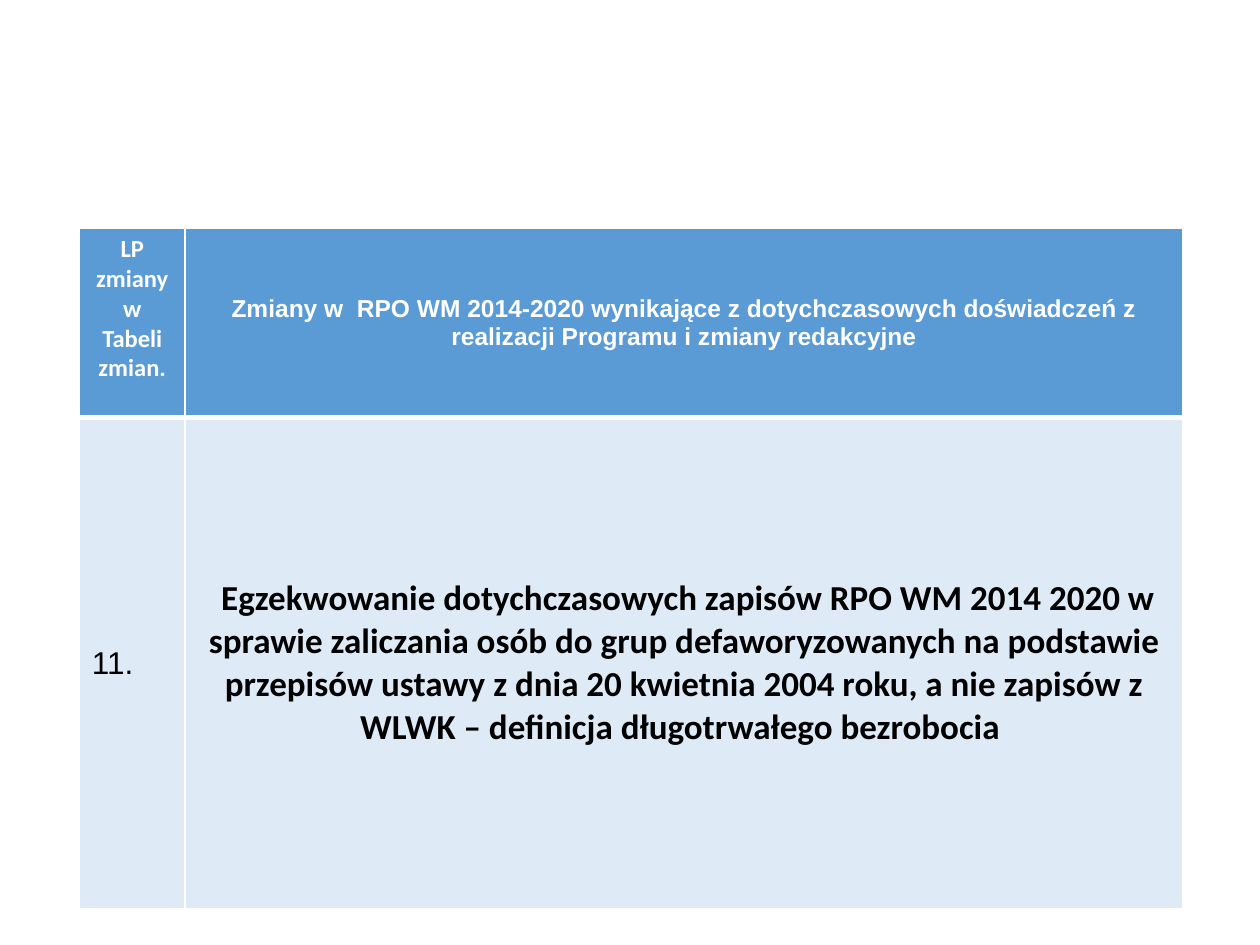
from lxml import etree
from pptx import Presentation
from pptx.dml.color import RGBColor
from pptx.enum.text import MSO_ANCHOR, PP_ALIGN
from pptx.oxml.ns import qn
from pptx.util import Inches, Pt

CENTER = PP_ALIGN.CENTER
LEFT = PP_ALIGN.LEFT
MIDDLE = MSO_ANCHOR.MIDDLE

COLORS = {"header": "5B9BD5", "body": "DEEBF7", "white": "FFFFFF", "black": "000000"}
COLUMN_WIDTHS = [0.84, 7.92]
ROWS = [
    {
        "height": 1.5, "fill": "header", "color": "white", "bottom_line": 3,
        "cells": [
            {"text": "LP zmiany w Tabeli zmian.", "font": "Calibri", "size": 14,
             "bold": True, "align": CENTER, "margins": (0.05, 0.27)},
            {"text": "Zmiany w  RPO WM 2014-2020 wynikające z dotychczasowych "
                     "doświadczeń z realizacji Programu i zmiany redakcyjne",
             "font": "Arial", "size": 14, "bold": True, "align": CENTER,
             "margins": (0.05, 0.05)},
        ],
    },
    {
        "height": 3.9, "fill": "body", "color": "black", "bottom_line": 1,
        "cells": [
            {"text": "11.", "font": "Arial", "size": 18, "bold": False,
             "align": LEFT, "margins": (0.05, 0.05)},
            {"text": " Egzekwowanie dotychczasowych zapisów RPO WM 2014 2020 w sprawie "
                     "zaliczania osób do grup defaworyzowanych na podstawie przepisów "
                     "ustawy z dnia 20 kwietnia 2004 roku, a nie zapisów z WLWK – "
                     "definicja długotrwałego bezrobocia ",
             "font": "Calibri", "size": 20, "bold": True, "align": CENTER,
             "margins": (0, 0), "space_after": 6},
        ],
    },
]


def add_borders(cell, bottom_width):
    properties = cell._tc.get_or_add_tcPr()
    widths = {"a:lnL": 1, "a:lnR": 1, "a:lnT": 1, "a:lnB": bottom_width}
    for position, (tag, width) in enumerate(widths.items()):
        line = etree.Element(qn(tag), w=str(Pt(width)))
        fill = etree.SubElement(line, qn("a:solidFill"))
        etree.SubElement(fill, qn("a:srgbClr"), val=COLORS["white"])
        properties.insert(position, line)


def fill_cell(cell, content, row):
    cell.fill.solid()
    cell.fill.fore_color.rgb = RGBColor.from_string(COLORS[row["fill"]])
    cell.vertical_anchor = MIDDLE
    cell.margin_left = cell.margin_right = Inches(0.1)
    cell.margin_top, cell.margin_bottom = map(Inches, content["margins"])
    para = cell.text_frame.paragraphs[0]
    para.alignment = content["align"]
    if "space_after" in content:
        para.space_after = Pt(content["space_after"])
    span = para.add_run()
    span.text = content["text"]
    span.font.name = content["font"]
    span.font.size = Pt(content["size"])
    span.font.bold = content["bold"]
    span.font.color.rgb = RGBColor.from_string(COLORS[row["color"]])
    add_borders(cell, row["bottom_line"])


def main():
    deck = Presentation()
    deck.slide_width, deck.slide_height = Inches(10), Inches(7.5)
    page = deck.slides.add_slide(deck.slide_layouts[6])
    table = page.shapes.add_table(
        len(ROWS), len(COLUMN_WIDTHS), Inches(0.63), Inches(1.81),
        Inches(sum(COLUMN_WIDTHS)), Inches(sum(row["height"] for row in ROWS)),
    ).table
    for column, width in zip(table.columns, COLUMN_WIDTHS):
        column.width = Inches(width)
    for table_row, row in zip(table.rows, ROWS):
        table_row.height = Inches(row["height"])
        for cell, content in zip(table_row.cells, row["cells"]):
            fill_cell(cell, content, row)
    deck.save("out.pptx")


if __name__ == "__main__":
    main()
